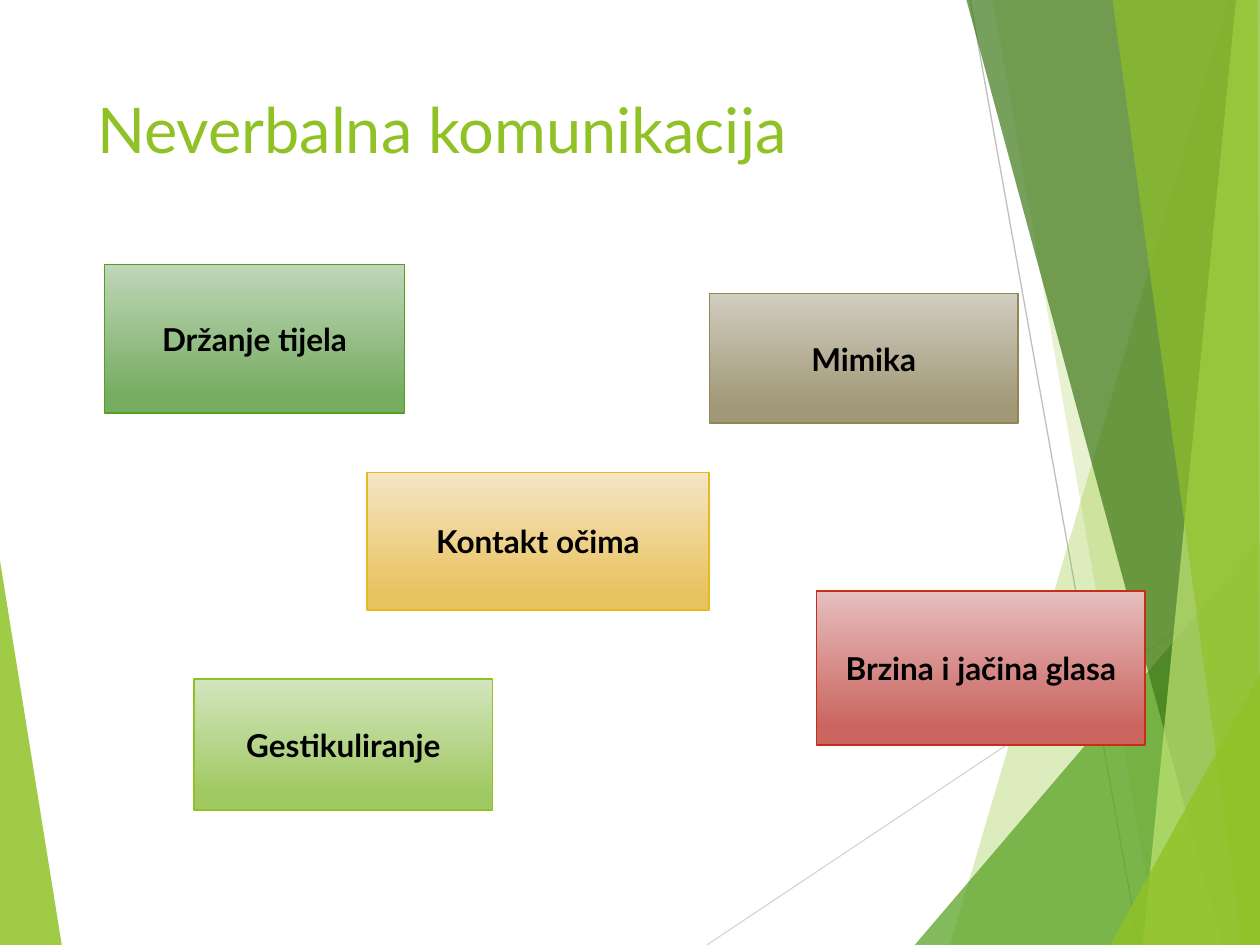
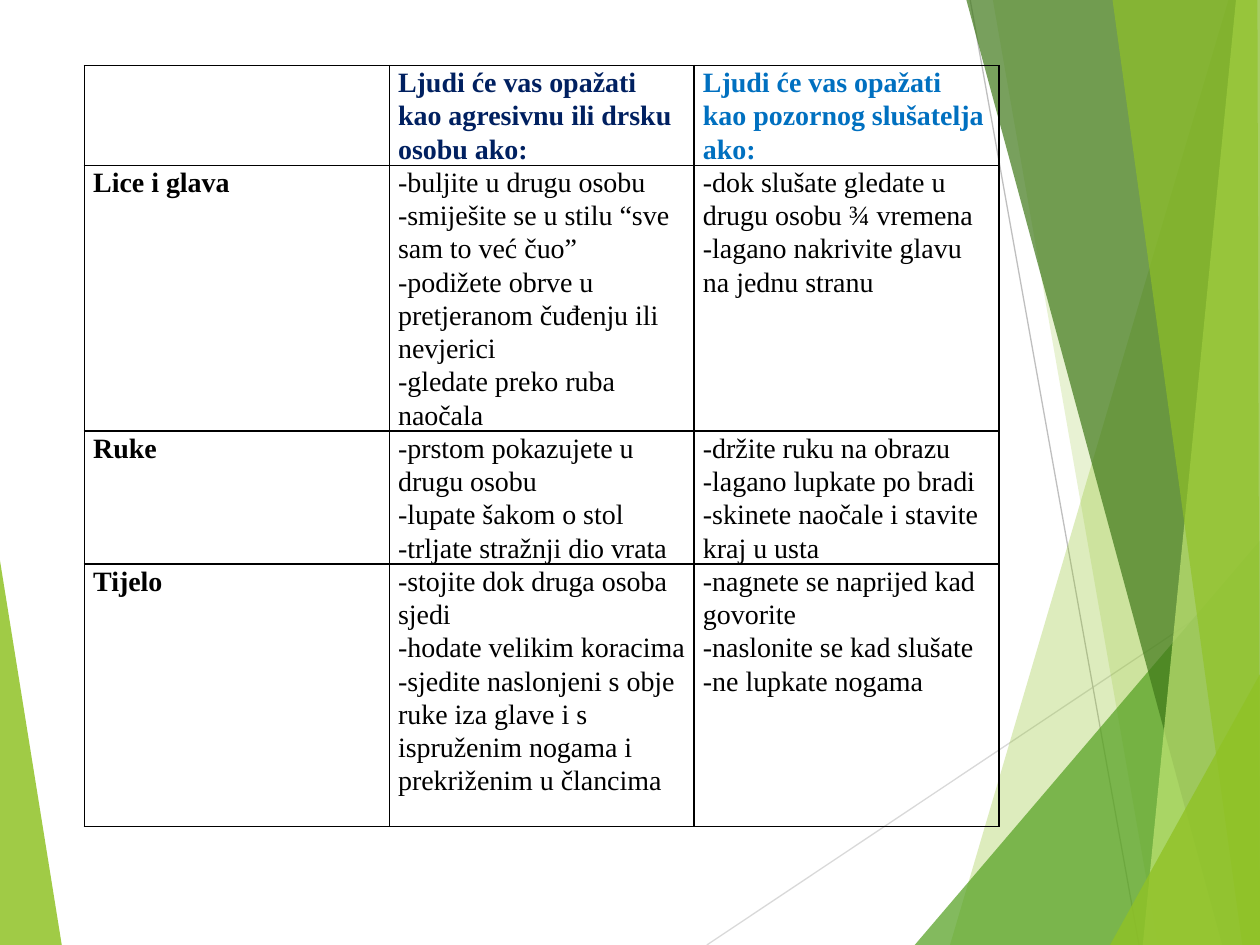
from pptx import Presentation
from pptx.dml.color import RGBColor
from pptx.enum.shapes import MSO_CONNECTOR, MSO_SHAPE
from pptx.enum.text import MSO_ANCHOR, MSO_AUTO_SIZE, PP_ALIGN
from pptx.oxml import parse_xml
from pptx.oxml.ns import nsdecls
from pptx.oxml.xmlchemy import OxmlElement as new_element
from pptx.util import Inches, Pt

WIDTH, HEIGHT = 10, 7.5
TITLE_FONT, TABLE_FONT = "Lato", "Times New Roman"
LIME, GREEN, DARK_GREEN, PALE_LIME = "90C226", "54A021", "3F7819", "C0E474"
BLACK, NAVY, BLUE = "000000", "002060", "0070C0"

# Background, back to front: colour, opacity in percent, corners
LEFT_FACET = (LIME, 85, [(0, 4.45), (0.49, HEIGHT), (0, HEIGHT)])
RAYS = [
    ("D9D9D9", (5.61, HEIGHT), (WIDTH, 4.57)),
    ("BFBFBF", (7.7, 0), (9.04, HEIGHT)),
]
RIGHT_FACETS = [
    (LIME, 30, [(9.75, 0), (7.54, HEIGHT), (WIDTH, HEIGHT), (WIDTH, 0)]),
    (LIME, 20, [(7.88, 0), (9.19, HEIGHT), (WIDTH, HEIGHT), (WIDTH, 0)]),
    (GREEN, 72, [(7.26, HEIGHT), (WIDTH, 4.29), (WIDTH, HEIGHT)]),
    (DARK_GREEN, 70, [(7.67, 0), (9.7, HEIGHT), (WIDTH, HEIGHT), (WIDTH, 0)]),
    (PALE_LIME, 70, [(9.81, 0), (9.07, HEIGHT), (WIDTH, HEIGHT), (WIDTH, 0)]),
    (LIME, 65, [(8.83, 0), (9.86, HEIGHT), (WIDTH, HEIGHT), (9.98, 0)]),
    (LIME, 80, [(8.81, HEIGHT), (WIDTH, 5.35), (WIDTH, HEIGHT)]),
]

TITLE = "Neverbalna komunikacija"
TITLE_BOX = (0.67, 0.67, 6.94, 1.44)

# Text, box, gradient top, gradient bottom, outline
SIGNALS = [
    ("Držanje tijela", (0.83, 2.1, 2.38, 1.18), "C0D6B9", "76AD61", GREEN),
    ("Mimika", (5.63, 2.33, 2.45, 1.03), "D1CDC0", "A19877", "918655"),
    ("Kontakt očima", (2.91, 3.75, 2.72, 1.09), "F5E5C5", "E9C260", "E6B91E"),
    ("Gestikuliranje", (1.54, 5.39, 2.37, 1.04), "D3E5BE", "A0C962", LIME),
    ("Brzina i jačina glasa", (6.48, 4.69, 2.61, 1.22), "E6BFBE", "CB6560", "C42F1A"),
]

IMPRESSIONS = [
    ([],
     ["Ljudi će vas opažati kao agresivnu ili drsku osobu ako:"],
     ["Ljudi će vas opažati kao pozornog slušatelja ako:"]),
    (["Lice i glava"],
     ["-buljite u drugu osobu",
      "-smiješite se u stilu “sve sam to već čuo”",
      "-podižete obrve u pretjeranom čuđenju ili nevjerici",
      "-gledate preko ruba naočala"],
     ["-dok slušate gledate u drugu osobu ¾ vremena",
      "-lagano nakrivite glavu na jednu stranu"]),
    (["Ruke"],
     ["-prstom pokazujete u drugu osobu",
      "-lupate šakom o stol",
      "-trljate stražnji dio vrata"],
     ["-držite ruku na obrazu",
      "-lagano lupkate po bradi",
      "-skinete naočale i stavite kraj u usta"]),
    (["Tijelo"],
     ["-stojite dok druga osoba sjedi",
      "-hodate velikim koracima",
      "-sjedite naslonjeni s obje ruke iza glave i s ispruženim nogama "
      "i prekriženim u člancima"],
     ["-nagnete se naprijed kad govorite",
      "-naslonite se kad slušate",
      "-ne lupkate nogama"]),
]
HEADER_COLOURS = [BLACK, NAVY, BLUE]
ROW_LINES = [3, 8, 4, 8]
LINE_HEIGHT, COLUMN_WIDTH = 0.26, 2.42
TABLE_LEFT, TABLE_TOP = 0.67, 0.52


def rgb(colour):
    return RGBColor.from_string(colour)


def inches(values):
    return [Inches(value) for value in values]


def style(paragraph, font, size, colour, bold=False):
    for target in [paragraph, *paragraph.runs]:
        target.font.name = font
        target.font.size = Pt(size)
        target.font.bold = bold
        target.font.color.rgb = rgb(colour)


def add_facet(slide, colour, opacity, corners):
    start, *others = [inches(corner) for corner in corners]
    outline = slide.shapes.build_freeform(*start, scale=1.0)
    outline.add_line_segments(others, close=True)
    facet = outline.convert_to_shape()
    facet.shadow.inherit = False
    facet.line.fill.background()
    facet.fill.solid()
    facet.fill.fore_color.rgb = rgb(colour)
    alpha = new_element("a:alpha")
    alpha.set("val", str(opacity * 1000))
    facet.element.spPr.find(".//" + "{*}srgbClr").append(alpha)
    return facet


def add_ray(slide, colour, start, end):
    ray = slide.shapes.add_connector(MSO_CONNECTOR.STRAIGHT, *inches(start + end))
    ray.line.color.rgb = rgb(colour)
    ray.line.width = Pt(0.75)
    ray.element.spPr.append(new_element("a:effectLst"))
    return ray


def draw_background(master, slide):
    """Build the background on a slide, then move it to the master."""
    parts = [add_facet(slide, *LEFT_FACET)]
    parts += [add_ray(slide, *ray) for ray in RAYS]
    parts += [add_facet(slide, *facet) for facet in RIGHT_FACETS]
    for number, part in enumerate(parts, start=100):
        part.element.xpath(".//p:cNvPr")[0].set("id", str(number))
        master.shapes.element.append(part.element)


def add_title(slide):
    title = slide.shapes.title
    title.left, title.top, title.width, title.height = inches(TITLE_BOX)
    frame = title.text_frame
    frame.text = TITLE
    frame.auto_size = MSO_AUTO_SIZE.NONE
    frame.vertical_anchor = MSO_ANCHOR.TOP
    frame.paragraphs[0].alignment = PP_ALIGN.LEFT
    style(frame.paragraphs[0], TITLE_FONT, 36, LIME)


def add_signal(slide, text, box, top_colour, bottom_colour, outline):
    signal = slide.shapes.add_shape(MSO_SHAPE.RECTANGLE, *inches(box))
    signal.shadow.inherit = False
    signal.line.color.rgb = rgb(outline)
    signal.line.width = Pt(1)
    signal.fill.gradient()
    signal.fill.gradient_angle = 270
    stops = zip(signal.fill.gradient_stops, (0, 0.88), (top_colour, bottom_colour))
    for stop, position, colour in stops:
        stop.position = position
        stop.color.rgb = rgb(colour)
    frame = signal.text_frame
    frame.text = text
    frame.vertical_anchor = MSO_ANCHOR.MIDDLE
    frame.paragraphs[0].alignment = PP_ALIGN.CENTER
    style(frame.paragraphs[0], TITLE_FONT, 18, BLACK, bold=True)


def add_borders(cell):
    properties = cell._tc.get_or_add_tcPr()
    for index, side in enumerate(("lnL", "lnR", "lnT", "lnB")):
        properties.insert(index, parse_xml(
            f'<a:{side} {nsdecls("a")} w="{Pt(1)}"><a:solidFill>'
            f'<a:srgbClr val="{BLACK}"/></a:solidFill></a:{side}>'))


def fill_cell(cell, lines, colour, bold):
    cell.margin_left = cell.margin_right = Inches(0.07)
    cell.margin_top = cell.margin_bottom = 0
    cell.fill.background()
    add_borders(cell)
    cell.text_frame.text = "\n".join(lines)
    for paragraph in cell.text_frame.paragraphs:
        paragraph.line_spacing = 1.07
        style(paragraph, TABLE_FONT, 16, colour, bold)


def add_impressions(slide):
    columns = len(HEADER_COLOURS)
    size = (columns * COLUMN_WIDTH, sum(ROW_LINES) * LINE_HEIGHT)
    table = slide.shapes.add_table(
        len(IMPRESSIONS), columns, *inches((TABLE_LEFT, TABLE_TOP) + size)).table
    table.first_row = table.horz_banding = False
    for row, lines in zip(table.rows, ROW_LINES):
        row.height = Inches(lines * LINE_HEIGHT)
    for r, row in enumerate(IMPRESSIONS):
        for c, lines in enumerate(row):
            colour = HEADER_COLOURS[c] if r == 0 else BLACK
            fill_cell(table.cell(r, c), lines, colour, bold=r == 0 or c == 0)


def main():
    deck = Presentation()
    deck.slide_width, deck.slide_height = inches((WIDTH, HEIGHT))
    title_only, blank = deck.slide_layouts[5], deck.slide_layouts[6]

    signals_slide = deck.slides.add_slide(title_only)
    draw_background(deck.slide_master, signals_slide)
    add_title(signals_slide)
    for signal in SIGNALS:
        add_signal(signals_slide, *signal)

    add_impressions(deck.slides.add_slide(blank))
    deck.save("out.pptx")


if __name__ == "__main__":
    main()
